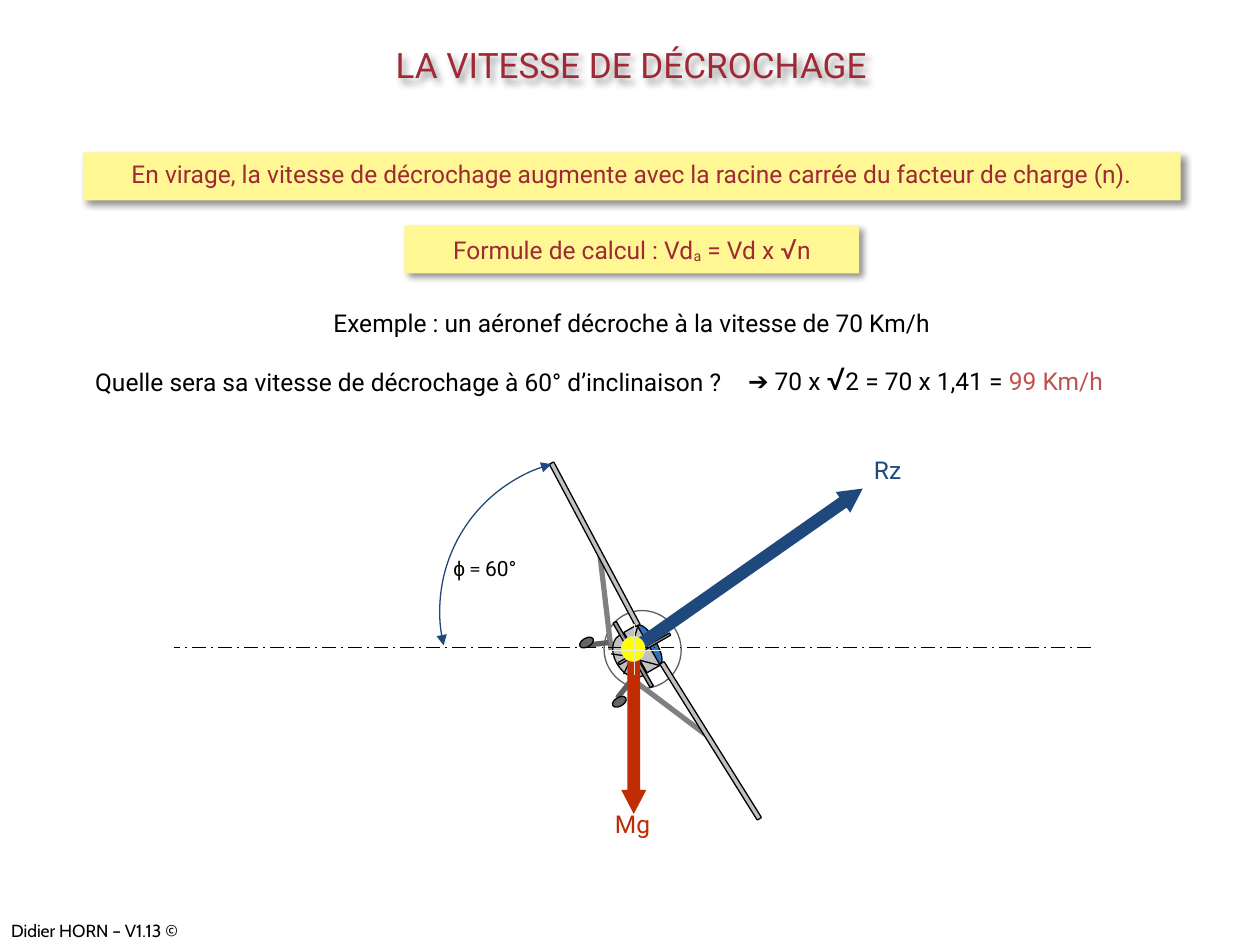
"""Build the slide on stall speed in a banked turn, laid out on a 1000 by 750 grid."""
from dataclasses import dataclass
from typing import Any, Optional, Sequence, Union

from lxml import etree
from pptx import Presentation
from pptx.dml import color
from pptx.enum import dml, shapes, text
from pptx.oxml import ns
from pptx import util as u

COLUMNS, ROWS = 1000, 750
WIDTH, HEIGHT = u.Inches(10), u.Inches(7.5)
COLORS = {
    "black": "000000", "wine": "9F2936", "red": "C0504D", "cream": "FFF793",
    "navy": "1F497D", "rust": "C02C04", "yellow": "FFFF00", "sand": "E3DED1",
    "ivory": "EEECE1", "silver": "C0C0C0", "steel": "969696", "grey": "808080",
    "slate": "5F5F5F", "tyre": "656565", "glass": "3172C4",
}
KIND = shapes.MSO_SHAPE
ALIGN = text.PP_ALIGN
ANCHOR = text.MSO_ANCHOR
Grid = tuple[int, int, int, int]


@dataclass(frozen=True)
class Span:
    words: str
    size: float = 14
    color: str = "black"
    font: str = "Roboto"
    baseline: int = 0


@dataclass(frozen=True)
class Part:
    kind: Any
    at: Grid
    turn: float = 0
    fill: Optional[str] = None
    line: Optional[str] = "black"
    weight: float = 0.75
    adjust: tuple[float, ...] = ()
    arrows: bool = False


@dataclass(frozen=True)
class Rod:
    ends: Grid
    line: str = "black"
    weight: float = 0.75
    dash: Any = None


def column(count: float) -> int:
    """Return the length of a number of grid columns."""
    return round(WIDTH * count / COLUMNS)


def row(count: float) -> int:
    """Return the length of a number of grid rows."""
    return round(HEIGHT * count / ROWS)


def place(at: Grid) -> tuple[int, int, int, int]:
    """Turn two grid pairs into slide lengths."""
    return column(at[0]), row(at[1]), column(at[2]), row(at[3])


def angle(degrees: float) -> float:
    """Turn clockwise degrees from 0 to 360 into an adjustment value."""
    return degrees * 60000 / 100000


def rgb(name: str) -> color.RGBColor:
    """Look up a named colour."""
    return color.RGBColor.from_string(COLORS[name])


def write(box: Any, spans: Sequence[Span], *, align: Any = ALIGN.CENTER,
          anchor: Any = ANCHOR.MIDDLE, wrap: bool = True) -> None:
    """Fill a box with one paragraph of formatted spans."""
    frame = box.text_frame
    frame.word_wrap = wrap
    frame.auto_size = text.MSO_AUTO_SIZE.NONE
    frame.vertical_anchor = anchor
    para = frame.paragraphs[0]
    para.alignment = align
    for span in spans:
        run = para.add_run()
        run.text = span.words
        run.font.size = u.Pt(span.size)
        run.font.name = span.font
        run.font.color.rgb = rgb(span.color)
        if span.baseline:
            run.font._element.set("baseline", str(span.baseline * 1000))


def label(owner: Any, at: Grid, *spans: Span, **form: Any) -> None:
    """Add a text box with formatted spans."""
    write(owner.shapes.add_textbox(*place(at)), spans, **form)


def cast_shadow(shape: Any) -> None:
    """Give a shape a soft shadow down and to the right."""
    shape.shadow.inherit = False
    effects = shape._element.spPr.find(ns.qn("a:effectLst"))
    outer = etree.SubElement(effects, ns.qn("a:outerShdw"), blurRad=str(u.Pt(4)),
                             dist=str(u.Pt(3)), dir=str(45 * 60000), algn="tl", rotWithShape="0")
    tint = etree.SubElement(outer, ns.qn("a:srgbClr"), val=COLORS["black"])
    etree.SubElement(tint, ns.qn("a:alpha"), val="43000")


def draw_part(owner: Any, part: Part) -> Any:
    """Draw a preset shape."""
    shape = owner.shapes.add_shape(part.kind, *place(part.at))
    shape.shadow.inherit = False
    shape.rotation = part.turn
    for index, value in enumerate(part.adjust):
        shape.adjustments[index] = value
    if part.fill:
        shape.fill.solid()
        shape.fill.fore_color.rgb = rgb(part.fill)
    else:
        shape.fill.background()
    if part.line:
        shape.line.color.rgb = rgb(part.line)
        shape.line.width = u.Pt(part.weight)
    else:
        shape.line.fill.background()
    if part.arrows:
        outline = shape.line._get_or_add_ln()
        for end in ("a:headEnd", "a:tailEnd"):
            etree.SubElement(outline, ns.qn(end), type="triangle")
    return shape


def draw_rod(owner: Any, rod: Rod) -> None:
    """Draw a straight line."""
    connector = owner.shapes.add_connector(shapes.MSO_CONNECTOR.STRAIGHT, *place(rod.ends))
    connector.line.color.rgb = rgb(rod.line)
    connector.line.width = u.Pt(rod.weight)
    if rod.dash:
        connector.line.dash_style = rod.dash
    etree.SubElement(connector._element.spPr, ns.qn("a:effectLst"))


def draw_all(owner: Any, items: Sequence[Union[Part, Rod]]) -> None:
    """Draw shapes and lines from back to front."""
    for item in items:
        if isinstance(item, Part):
            draw_part(owner, item)
        else:
            draw_rod(owner, item)


def banner(page: Any, at: Grid, *spans: Span) -> None:
    """Draw a shadowed cream band with text."""
    box = draw_part(page, Part(KIND.RECTANGLE, at, fill="cream", line=None))
    cast_shadow(box)
    write(box, spans, anchor=ANCHOR.TOP)


def wheel(at: Grid) -> Part:
    """Describe a wheel of the aircraft."""
    return Part(KIND.OVAL, at, 60, "tyre")


def blade(at: Grid, turn: float, fill: str) -> Part:
    """Describe a thin rounded bar of the aircraft."""
    return Part(KIND.ROUNDED_RECTANGLE, at, turn, fill, adjust=(0.17,))


def force(at: Grid, turn: float, fill: str) -> Part:
    """Describe a block arrow for a force."""
    return Part(KIND.UP_ARROW, at, turn, fill, None, adjust=(0.5, 0.96))


AIRCRAFT = (
    Part(KIND.OVAL, (479, 485, 62, 61), 60, line="slate"),
    Rod((485, 516, 476, 439), "grey", 3), Rod((499, 537, 560, 583), "grey", 3),
    blade((491, 586, 146, 4), 58, "silver"),
    Part(KIND.OVAL, (498, 506, 35, 11), 60, "glass"),
    Part(KIND.OVAL, (482, 508, 37, 25), 60, "silver"),
    Part(KIND.RECTANGLE, (491, 509, 37, 12), 60, "silver"),
    blade((488, 514, 47, 2), 330, "steel"),
    Rod((500, 521, 485, 519)), Rod((501, 522, 495, 535)),
    Rod((483, 510, 466, 512), "slate", 3), Rod((501, 540, 490, 554), "slate", 3),
    wheel((488, 551, 7, 12)),
    Rod((500, 517, 506, 498)), Rod((504, 523, 523, 528)),
    blade((399, 430, 146, 4), 62, "silver"),
    wheel((462, 504, 7, 12)),
    blade((473, 518, 59, 3), 60, "steel"),
)
BANK_ARC = Part(KIND.ARC, (349, 364, 242, 242), line="navy", arrows=True,
                adjust=(angle(167), angle(254.5)))
LIFT = force((583, 340, 20, 224), 55, "navy")
WEIGHT = (
    force((493, 518, 20, 128), 180, "rust"),
    Part(KIND.OVAL, (493, 505, 19, 20), fill="yellow", line="sand", weight=0.25),
    Rod((503, 495, 503, 536), "sand", 0.25), Rod((525, 516, 481, 516), "ivory", 0.25),
)


def main() -> None:
    """Build and save the deck."""
    deck = Presentation()
    deck.slide_width, deck.slide_height = WIDTH, HEIGHT
    page = deck.slides.add_slide(deck.slide_layouts[5])
    title = page.shapes.title
    title.left, title.top, title.width, title.height = place((225, 32, 552, 39))
    write(title, [Span("LA VITESSE DE DÉCROCHAGE", 20, "wine")])
    cast_shadow(title)
    label(page, (-1, 725, 150, 27), Span("Didier HORN – V1.13 ©", 10, font="Cabin"),
          align=ALIGN.LEFT, wrap=False)
    label(page, (39, 239, 925, 34), Span("Exemple : un aéronef décroche à la vitesse de 70 Km/h"))
    label(page, (40, 286, 543, 34),
          Span("Quelle sera sa vitesse de décrochage à 60° d’inclinaison ?"), align=ALIGN.RIGHT)
    banner(page, (321, 179, 361, 38), Span("Formule de calcul : Vd", color="wine"),
           Span("a", color="wine", baseline=-9), Span(" = Vd x ", color="wine"),
           Span("√", 16, "wine"), Span("n", color="wine"))
    label(page, (542, 280, 385, 40), Span("➔", font="Arial"), Span(" 70 x "), Span("√", 18),
          Span("2 = 70 x 1,41 ="), Span(" 99 Km/h", color="red"))
    turn = page.shapes.add_group_shape()
    draw_all(turn, AIRCRAFT)
    label(turn, (350, 436, 125, 30), Span("ϕ", 12, font="Arial"),
          Span(" = ", 12, font="Calibri"), Span("60°", 12), align=ALIGN.LEFT)
    draw_all(turn, (BANK_ARC, LIFT))
    label(turn, (663, 356, 83, 34), Span("Rz", color="navy"))
    draw_rod(page, Rod((866, 514, 138, 514), weight=1, dash=dml.MSO_LINE.LONG_DASH_DOT))
    pull = page.shapes.add_group_shape()
    label(pull, (420, 637, 164, 34), Span("Mg", color="rust"))
    draw_all(pull, WEIGHT)
    banner(page, (66, 121, 871, 38), Span(
        "En virage, la vitesse de décrochage augmente avec la racine carrée du facteur de charge (n).",
        color="wine"))
    deck.save("out.pptx")


if __name__ == "__main__":
    main()
